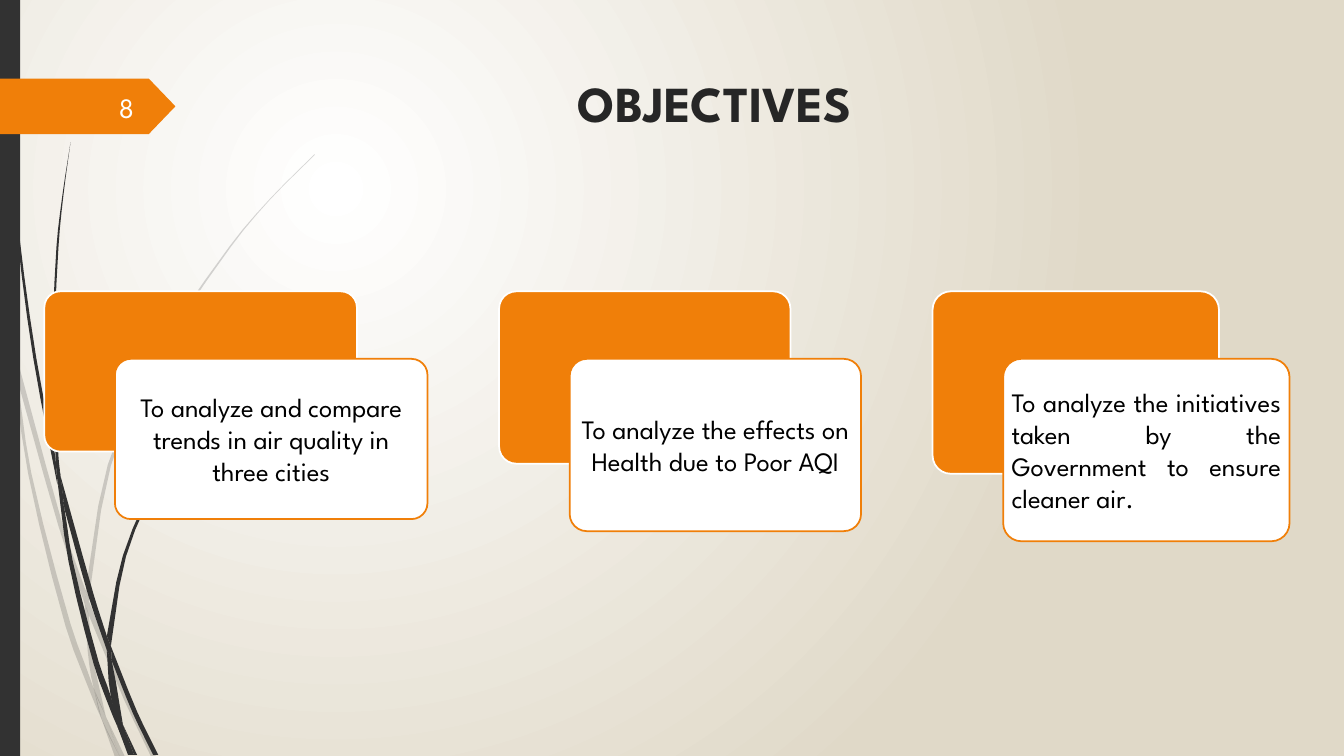
import math
import pptx
import pptx.util
import pptx.dml.color
import pptx.enum.shapes
import pptx.enum.text
import pptx.oxml
import pptx.oxml.ns

Inches = pptx.util.Inches
Pt = pptx.util.Pt
SHAPE = pptx.enum.shapes.MSO_SHAPE
ALIGN = pptx.enum.text.PP_ALIGN
ANCHOR = pptx.enum.text.MSO_ANCHOR

FONT = "League Spartan"
COLORS = {"orange": "F07F09", "dark": "323232", "title": "262626", "white": "FFFFFF",
          "number": "FEFFFF", "text": "000000", "sand": "E0D9C8"}

# Grass blade sections: the two edges of each, from top to bottom
PALE_BLADES = [
    ([(0, 2.82), (0.09, 3.22), (0.11, 3.5)], [(0, 2.99), (0.1, 3.44), (0.11, 3.5)]),
    ([(0.14, 3.45), (0.62, 5.2), (0.85, 5.86)], [(0.17, 3.76), (0.58, 5.22), (0.84, 5.99)]),
    ([(0.88, 5.96), (1.27, 6.92), (1.55, 7.51)], [(0.88, 6.1), (1.23, 6.94), (1.5, 7.51)]),
    ([(1.05, 7.11), (1.24, 7.51)], [(1.05, 7.11), (1.19, 7.51)]),
    ([(0.11, 3.5), (0.17, 3.76), (0.31, 4.69), (0.7, 6.19), (0.93, 6.83), (1.01, 7.14)],
     [(0.11, 3.5), (0.28, 4.7), (0.65, 6.21), (0.92, 6.93), (1.01, 7.14)]),
    ([(0.84, 5.99), (0.87, 6.46), (0.93, 6.83), (1.05, 7.11)],
     [(0.84, 5.99), (0.88, 6.1), (0.91, 6.46), (1.05, 7.11)]),
    ([(3.12, 1.53), (2.68, 1.97), (2.28, 2.44), (1.58, 3.48), (1.07, 4.61), (0.85, 5.86)],
     [(3.12, 1.54), (2.68, 1.98), (2.29, 2.45), (1.6, 3.49), (1.1, 4.62), (0.88, 5.96)]),
    ([(1.01, 7.14), (1.14, 7.51)], [(1.01, 7.14), (1.19, 7.51)]),
    ([(0.85, 5.86), (0.84, 5.99)], [(0.88, 5.96), (0.88, 6.1)]),
    ([(0.93, 6.83), (1.01, 7.14), (1.19, 7.51)], [(0.93, 6.83), (1.05, 7.11), (1.19, 7.51)]),
]
DARK_BLADES = [
    ([(0.03, 0), (0.07, 1.1), (0.17, 2.33), (0.33, 3.55), (0.57, 4.81)],
     [(0.04, 0), (0.08, 1.09), (0.19, 2.32), (0.36, 3.55), (0.55, 4.53)]),
    ([(0.6, 4.72), (0.93, 5.9), (1.06, 6.31)], [(0.64, 5.05), (0.88, 5.92), (1.06, 6.45)]),
    ([(1.1, 6.41), (1.36, 7.06), (1.57, 7.49)], [(1.11, 6.56), (1.32, 7.08), (1.52, 7.49)]),
    ([(0.57, 4.77), (0.64, 5.05), (0.72, 5.56), (0.98, 6.57), (1.1, 6.91), (1.17, 7.22)],
     [(0.57, 4.77), (0.68, 5.57), (0.93, 6.59), (1.11, 7.08), (1.17, 7.22)]),
    ([(0.7, 1.41), (0.62, 1.93), (0.56, 2.45), (0.52, 3.49), (0.55, 4.49), (0.6, 4.72)],
     [(0.7, 1.41), (0.63, 1.93), (0.58, 2.45), (0.54, 3.49), (0.58, 4.53), (0.6, 4.72)]),
    ([(1.22, 7.19), (1.33, 7.49)], [(1.22, 7.19), (1.36, 7.49)]),
    ([(0.55, 4.49), (0.57, 4.77), (0.64, 5.05)], [(0.55, 4.49), (0.6, 4.72), (0.64, 5.05)]),
    ([(2.6, 3.44), (2.31, 3.73), (2.04, 4.05), (1.56, 4.74), (1.22, 5.51), (1.06, 6.31)],
     [(2.61, 3.44), (2.31, 3.74), (2.05, 4.06), (1.58, 4.76), (1.25, 5.52), (1.1, 6.41)]),
    ([(1.17, 7.22), (1.27, 7.49)], [(1.17, 7.22), (1.31, 7.49)]),
    ([(1.06, 6.45), (1.1, 6.91), (1.22, 7.19)], [(1.06, 6.45), (1.11, 6.56), (1.22, 7.19)]),
    ([(1.06, 6.31), (1.06, 6.45)], [(1.1, 6.41), (1.11, 6.56)]),
    ([(1.1, 6.91), (1.17, 7.22), (1.3, 7.49)], [(1.1, 6.91), (1.22, 7.19), (1.33, 7.49)]),
]

# Objectives: left, width, height, alignment, text
OBJECTIVES = [
    (0.44, 3.1, 1.59, ALIGN.CENTER, "To analyze and compare trends in air quality in three cities"),
    (4.95, 2.89, 1.71, ALIGN.CENTER, "To analyze the effects on Health due to Poor AQI"),
    (9.25, 2.84, 1.81, ALIGN.JUSTIFY,
     "To analyze the initiatives taken by the Government to ensure cleaner air."),
]
CARD_TOP, CARD_SHIFT_X, CARD_SHIFT_Y = 2.89, 0.7, 0.67


def rgb(name):
    return pptx.dml.color.RGBColor.from_string(COLORS[name])


def set_attrs(obj, values):
    for name, value in values.items():
        setattr(obj, name, value)


def paint(sp, fill, line=None, alpha=None):
    sp.shadow.inherit = False
    sp.fill.solid()
    sp.fill.fore_color.rgb = rgb(fill)
    if alpha is not None:
        color = sp.fill._xPr.find(".//" + pptx.oxml.ns.qn("a:srgbClr"))
        color.append(pptx.oxml.parse_xml(
            f'<a:alpha {pptx.oxml.ns.nsdecls("a")} val="{alpha * 1000}"/>'))
    if line:
        sp.line.color.rgb = rgb(line)
        sp.line.width = Pt(1.25)
    else:
        sp.line.fill.background()


def add_preset(s, kind, box, fill, line=None, adj=None):
    sp = s.shapes.add_shape(kind, *map(Inches, box))
    if adj is not None:
        sp.adjustments[0] = adj
    paint(sp, fill, line)
    return sp


def write(sp, text, size, color, align, anchor=ANCHOR.MIDDLE, bold=False, inset=None):
    tf = sp.text_frame
    set_attrs(tf, {"word_wrap": True, "vertical_anchor": anchor})
    if inset is not None:
        set_attrs(tf, {f"margin_{side}": Inches(inset)
                       for side in ("left", "right", "top", "bottom")})
    p = tf.paragraphs[0]
    p.alignment = align
    r = p.add_run()
    r.text = text
    set_attrs(r.font, {"name": FONT, "size": Pt(size), "bold": bold})
    r.font.color.rgb = rgb(color)


def add_label(s, box, *args, **kwargs):
    write(s.shapes.add_textbox(*map(Inches, box)), *args, **kwargs)


def smooth_edge(points, steps=3):
    """Pass a cubic Hermite curve through the points."""
    last = len(points) - 1
    slopes = []
    for i in range(last + 1):
        a, b, c = points[max(i - 1, 0)], points[i], points[min(i + 1, last)]
        length = math.dist(a, b) + math.dist(b, c)
        slopes.append([(c[k] - a[k]) / length for k in (0, 1)])
    curve = [points[0]]
    for i in range(last):
        a, b = points[i], points[i + 1]
        d = math.dist(a, b)
        for n in range(1, steps + 1):
            t = n / steps
            w = 3 * t**2 - 2 * t**3
            u, v = d * (t**3 - 2 * t**2 + t), d * (t**3 - t**2)
            curve.append(tuple(a[k] * (1 - w) + b[k] * w + slopes[i][k] * u
                               + slopes[i + 1][k] * v for k in (0, 1)))
    return curve


def add_blade(s, edges, alpha=None):
    near, far = (smooth_edge(e) if len(e) > 2 else e for e in edges)
    outline = [(Inches(x), Inches(y)) for x, y in near + far[::-1]]
    builder = s.shapes.build_freeform(*outline[0], scale=1.0)
    builder.add_line_segments(outline[1:], close=True)
    paint(builder.convert_to_shape(), "dark", alpha=alpha)


def add_objective(s, left, width, height, align, text):
    add_preset(s, SHAPE.ROUNDED_RECTANGLE, (left, CARD_TOP, width, height),
               "orange", "white", adj=0.1)
    front = (left + CARD_SHIFT_X, CARD_TOP + CARD_SHIFT_Y, width, height)
    card = add_preset(s, SHAPE.ROUNDED_RECTANGLE, front, "white", "orange", adj=0.1)
    write(card, text, 19, "text", align, inset=0.03)


def set_background(s):
    fill = s.background.fill
    fill.gradient()
    for stop, name, position in zip(fill.gradient_stops, ("white", "sand"), (0, 1)):
        stop.color.rgb = rgb(name)
        stop.position = position
    grad = s.background._cSld.find(".//" + pptx.oxml.ns.qn("a:gradFill"))
    grad.remove(grad.find(pptx.oxml.ns.qn("a:lin")))
    grad.append(pptx.oxml.parse_xml(
        f'<a:path {pptx.oxml.ns.nsdecls("a")} path="circle">'
        '<a:fillToRect l="50000" t="50000" r="100000" b="100000"/></a:path>'))


def main():
    prs = pptx.Presentation()
    set_attrs(prs, {"slide_width": Inches(13.33), "slide_height": Inches(7.5)})
    s = prs.slides.add_slide(prs.slide_layouts[6])
    set_background(s)
    # Grass and side bar
    for blades, alpha in ((PALE_BLADES, 20), (DARK_BLADES, None)):
        for edges in blades:
            add_blade(s, edges, alpha)
    add_preset(s, SHAPE.RECTANGLE, (0, 0, 0.2, 7.5), "dark")
    # Page tag and title
    add_preset(s, SHAPE.PENTAGON, (0, 0.78, 1.74, 0.55), "orange", adj=0.48)
    add_label(s, (2, 0.67, 10.18, 1.4), "OBJECTIVES", 36, "title", ALIGN.CENTER,
              anchor=ANCHOR.TOP, bold=True)
    # Objective cards and page number
    for objective in OBJECTIVES:
        add_objective(s, *objective)
    add_label(s, (0.58, 0.86, 0.85, 0.4), "8", 20, "number", ALIGN.RIGHT)
    prs.save("out.pptx")


if __name__ == "__main__":
    main()
